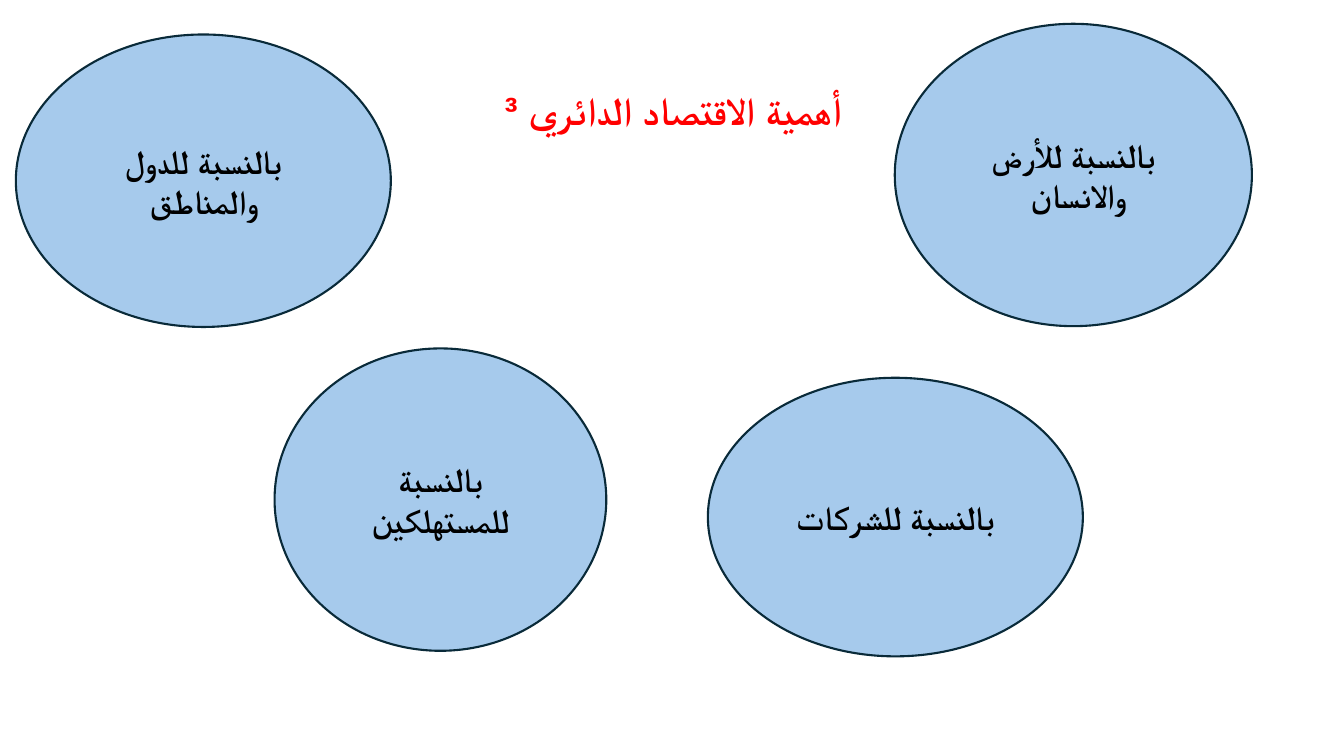
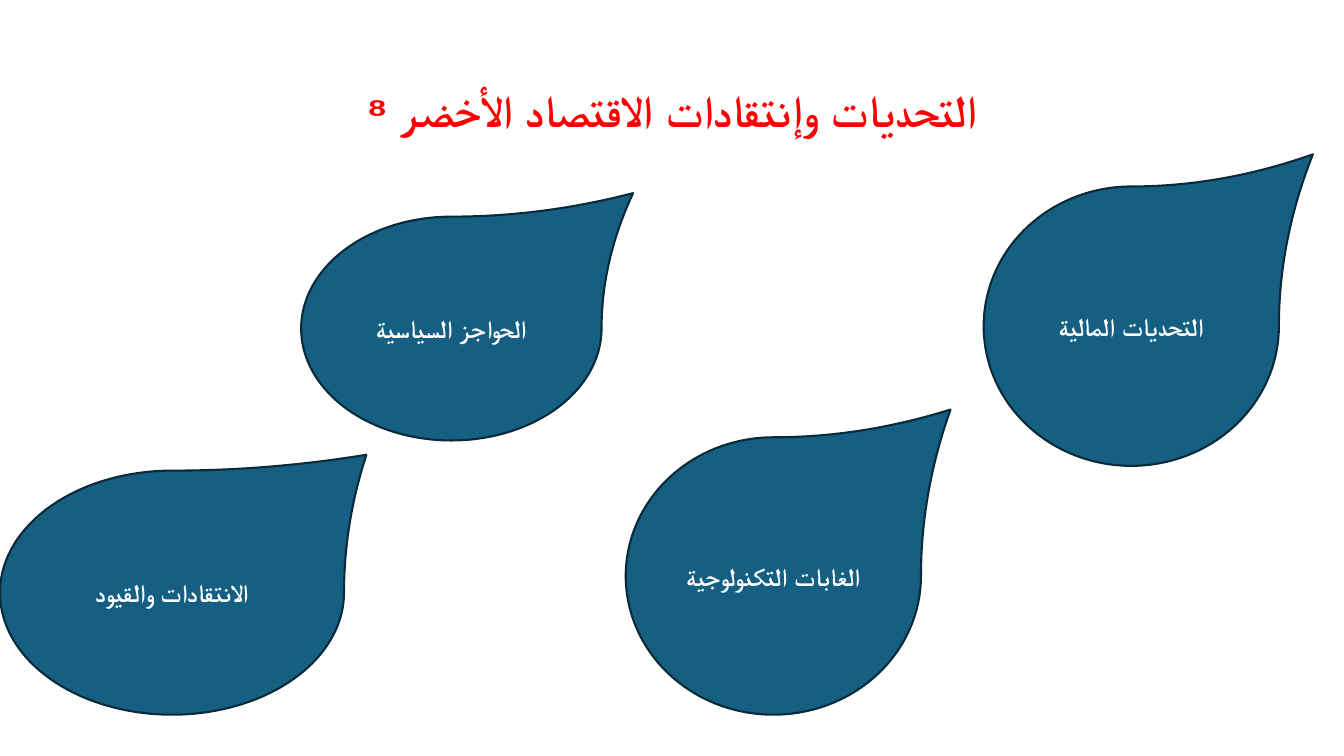
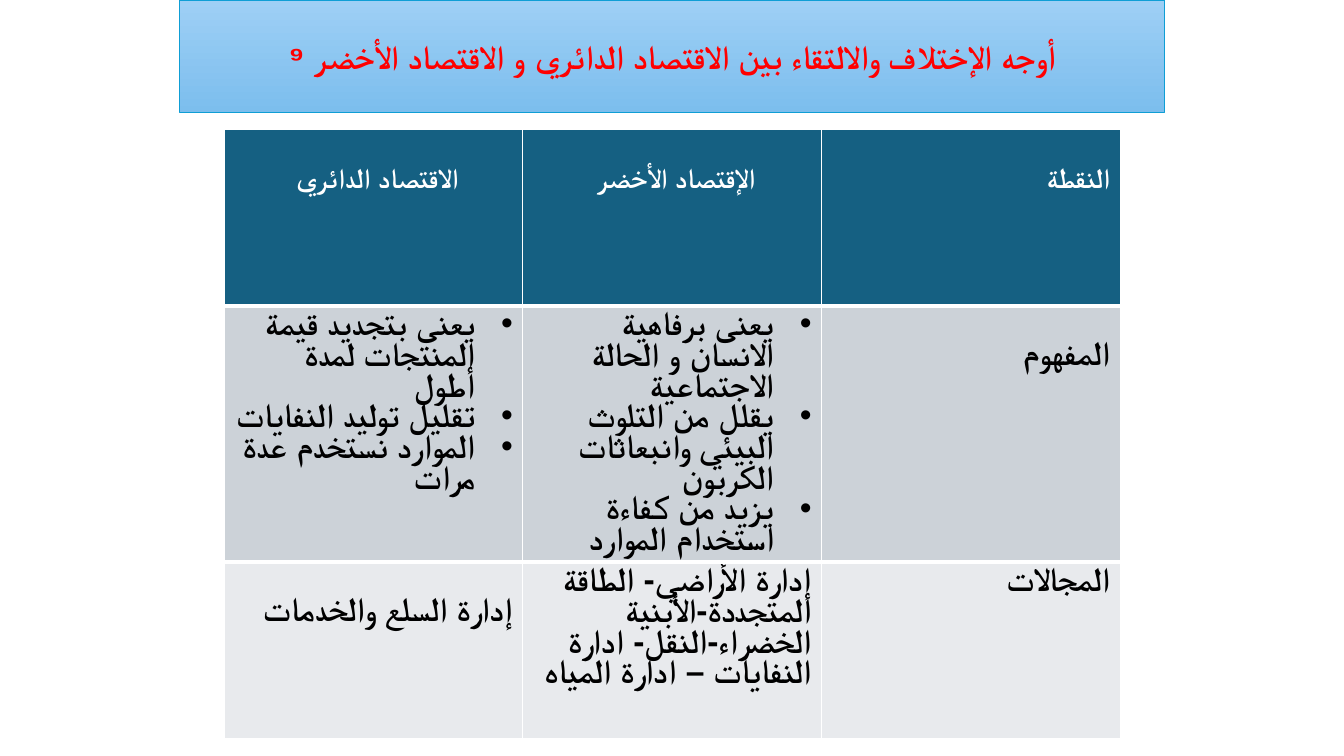
from lxml.etree import SubElement
from pptx import Presentation
from pptx.dml.color import RGBColor
from pptx.enum.shapes import MSO_SHAPE
from pptx.enum.text import MSO_ANCHOR, PP_ALIGN
from pptx.oxml.ns import qn
from pptx.util import Cm, Pt

COLORS = {
    "title": "FF0000",
    "black": "000000",
    "white": "FFFFFF",
    "outline": "092A39",
    "oval": "A6CAEC",
    "teal": "156082",
    "banner_top": "9ECFF5",
    "banner_bottom": "7CBEED",
    "banner_outline": "0F9ED5",
    "row_dark": "CCD2D8",
    "row_light": "E8EAED",
}
FONT = "Cabin"
ARABIC_FONT = "Arial"
BULLET_INDENT = Cm(0.95)


def color(name):
    return RGBColor.from_string(COLORS[name])


def write(text_frame, lines, size, color_name, align=PP_ALIGN.CENTER,
          bulleted=False, line_spacing=None):
    """Fill a text frame with bold right-to-left paragraphs."""
    for index, line in enumerate(lines):
        paragraph = text_frame.paragraphs[0] if index == 0 else text_frame.add_paragraph()
        paragraph.alignment = align
        if line_spacing:
            paragraph.line_spacing = line_spacing
        properties = paragraph._p.get_or_add_pPr()
        properties.set("rtl", "1")
        if bulleted:
            properties.set("marL", str(BULLET_INDENT))
            properties.set("indent", str(-BULLET_INDENT))
            SubElement(properties, qn("a:buFont"), typeface="Arial")
            SubElement(properties, qn("a:buChar"), char="•")
        run = paragraph.add_run()
        run.text = line
        for name, value in {"size": Pt(size), "bold": True, "name": FONT}.items():
            setattr(run.font, name, value)
        run.font.color.rgb = color(color_name)
        # Arabic text takes its typeface from the complex-script font
        SubElement(run._r.get_or_add_rPr(), qn("a:cs"), typeface=ARABIC_FONT)


presentation = Presentation()
presentation.slide_width = Cm(33.87)
presentation.slide_height = Cm(19.05)

# Title position shared by all slides
title_layout = presentation.slide_layouts.get_by_name("Title Only")
title_frame = {"left": Cm(2.33), "top": Cm(1.01), "width": Cm(29.21), "height": Cm(3.68)}
for name, value in title_frame.items():
    setattr(title_layout.placeholders[0], name, value)

# Slides 1 and 2: a title with four labelled shapes (left, top, width, height in cm)
shape_slides = [
    {
        "title": "أهمية الاقتصاد الدائري ³", "title_size": 28,
        "preset": MSO_SHAPE.OVAL, "fill": "oval", "text": "black", "size": 24,
        "items": [
            ("بالنسبة للمستهلكين", (6.92, 8.78, 8.36, 7.62), None),
            ("بالنسبة للشركات", (17.84, 9.52, 9.45, 7.02), None),
            ("بالنسبة للدول والمناطق", (0.4, 0.87, 9.45, 7.37), None),
            ("بالنسبة للأرض والانسان ", (22.55, 0.6, 9, 7.62), None),
        ],
    },
    {
        "title": "التحديات وإنتقادات الاقتصاد الأخضر ⁸", "title_size": 32,
        "preset": MSO_SHAPE.TEAR, "fill": "teal", "text": "white", "size": 18,
        "items": [
            ("الانتقادات والقيود", (0, 11.86, 8.67, 6.15), 1.13),
            ("الغابات التكنولوجية", (15.77, 11.02, 7.44, 6.99), 1.2),
            ("الحواجز السياسية", (7.59, 5.46, 7.57, 5.64), 1.21),
            ("التحديات المالية", (24.79, 4.7, 7.44, 7.04), 1.23),
        ],
    },
]
for content in shape_slides:
    slide = presentation.slides.add_slide(title_layout)
    write(slide.shapes.title.text_frame, [content["title"]],
          content["title_size"], "title", line_spacing=0.9)
    for label, box, adjustment in content["items"]:
        shape = slide.shapes.add_shape(content["preset"], *map(Cm, box))
        if adjustment:
            shape.adjustments[0] = adjustment
        shape.shadow.inherit = False
        shape.fill.solid()
        shape.fill.fore_color.rgb = color(content["fill"])
        shape.line.color.rgb = color("outline")
        shape.line.width = Pt(1.5)
        write(shape.text_frame, [label], content["size"], content["text"])

# Slide 3: banner title and comparison table
slide = presentation.slides.add_slide(title_layout)
banner = slide.shapes.title
banner_frame = {"left": Cm(4.53), "top": Cm(0), "width": Cm(24.81), "height": Cm(2.83)}
for name, value in banner_frame.items():
    setattr(banner, name, value)
banner.fill.gradient()
banner.fill.gradient_angle = 270
for stop, name, position in zip(banner.fill.gradient_stops,
                                ("banner_top", "banner_bottom"), (0, 1)):
    stop.color.rgb = color(name)
    stop.position = position
banner.line.color.rgb = color("banner_outline")
banner.line.width = Pt(1)
banner.text_frame.vertical_anchor = MSO_ANCHOR.MIDDLE
write(banner.text_frame,
      ["أوجه الإختلاف والالتقاء بين الاقتصاد الدائري و الاقتصاد الأخضر ⁹"], 24, "title")

# Each cell: lines and top margin in cm
rows = [
    [
        (["الاقتصاد الدائري "], 0.84),
        (["الإقتصاد الأخضر "], 0.84),
        (["النقطة"], 0.84),
    ],
    [
        (["يعنى بتجديد قيمة المنتجات لمدة أطول", "تقليل توليد النفايات ",
          "الموارد نستخدم عدة مرات"], 0.13),
        (["يعنى برفاهية الانسان و الحالة الاجتماعية ",
          "يقلل من التلوث البيئي وانبعاثات الكربون",
          "يزيد من كفاءة استخدام الموارد"], 0.13),
        (["المفهوم"], 0.89),
    ],
    [
        (["إدارة السلع والخدمات"], 0.89),
        (["إدارة الأراضي- الطاقة المتجددة-الأبنية الخضراء-النقل- ادارة النفايات – ادارة المياه"],
         0.13),
        (["المجالات"], 0.13),
    ],
]
row_fills = ["teal", "row_dark", "row_light"]
# The thick rule below the header belongs to both rows that touch it
header_rule_sides = ["a:lnB", "a:lnT", None]
table = slide.shapes.add_table(3, 3, Cm(5.65), Cm(3.26), Cm(22.58), Cm(13.35)).table
for row_index, (row, fill_name, side) in enumerate(zip(rows, row_fills, header_rule_sides)):
    is_header = row_index == 0
    for column_index, (lines, top_margin) in enumerate(row):
        cell = table.cell(row_index, column_index)
        cell.margin_top = Cm(top_margin)
        if side:
            rule = SubElement(cell._tc.get_or_add_tcPr(), qn(side), w=str(Pt(3)))
            rule_fill = SubElement(rule, qn("a:solidFill"))
            SubElement(rule_fill, qn("a:srgbClr"), val=COLORS["white"])
        cell.fill.solid()
        cell.fill.fore_color.rgb = color(fill_name)
        centred = is_header and column_index < 2
        write(cell.text_frame, lines,
              20 if is_header else 24,
              "white" if is_header else "black",
              PP_ALIGN.CENTER if centred else PP_ALIGN.RIGHT,
              bulleted=len(lines) > 1,
              line_spacing=None if is_header else 0.82)

presentation.save("out.pptx")
